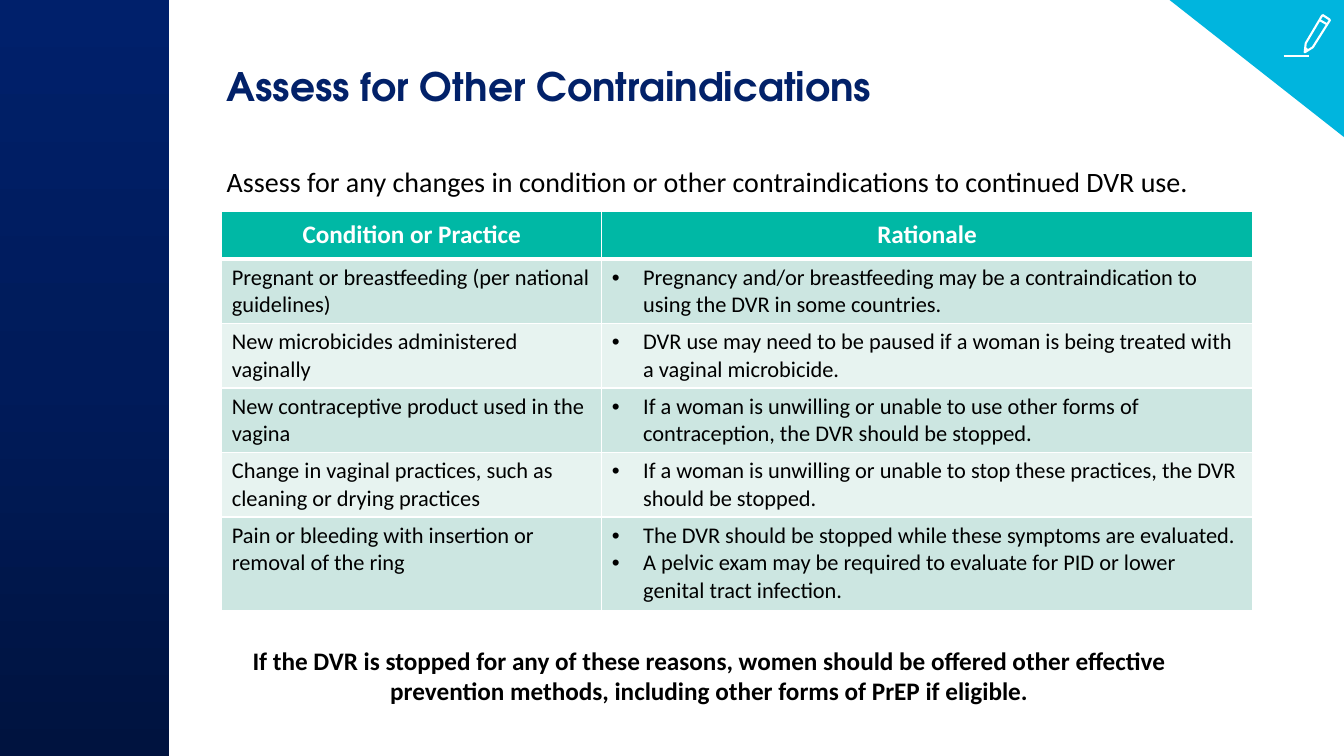
"""Build the slide on assessing other contraindications to continued DVR use."""
from copy import deepcopy
from dataclasses import dataclass

from lxml import etree
from pptx import Presentation
from pptx.dml.color import RGBColor
from pptx.enum import shapes, text
from pptx.oxml import ns
from pptx.util import Inches, Pt

TITLE = "Assess for Other Contraindications"
INTRO = "Assess for any changes in condition or other contraindications to continued DVR use."
ADVICE = ("If the DVR is stopped for any of these reasons, women should be offered other effective "
          "prevention methods, including other forms of PrEP if eligible.")
HEADINGS = ("Condition or Practice", "Rationale")
CONDITIONS = [
    ("Pregnant or breastfeeding (per national guidelines)",
     ["Pregnancy and/or breastfeeding may be a contraindication to using the DVR in some countries."]),
    ("New microbicides administered vaginally",
     ["DVR use may need to be paused if a woman is being treated with a vaginal microbicide."]),
    ("New contraceptive product used in the vagina",
     ["If a woman is unwilling or unable to use other forms of contraception, the DVR should be stopped."]),
    ("Change in vaginal practices, such as cleaning or drying practices",
     ["If a woman is unwilling or unable to stop these practices, the DVR should be stopped."]),
    ("Pain or bleeding with insertion or removal of the ring",
     ["The DVR should be stopped while these symptoms are evaluated.",
      "A pelvic exam may be required to evaluate for PID or lower genital tract infection."]),
]
COLUMN_WIDTHS = (3.77, 6.45)
ROW_HEIGHTS = [0.47] + [0.64] * 4 + [0.93]
PENCIL_OUTLINE = [(13.02, 0.47), (12.94, 0.52), (12.95, 0.43), (13.11, 0.16),
                  (13.12, 0.15), (13.18, 0.19), (13.19, 0.2)]
PENCIL_STROKES = [(13.09, 0.2, 13.16, 0.24), (12.95, 0.48, 12.97, 0.5), (12.73, 0.56, 12.98, 0.56)]


@dataclass(frozen=True)
class Theme:
    title_font: str = "TeX Gyre Adventor"
    body_font: str = "Calibri"
    navy: str = "022169"
    black: str = "000000"
    white: str = "FFFFFF"
    teal: str = "00B8A5"
    cyan: str = "00B5DE"
    bands: tuple = ("CCE6E1", "E7F3F0")
    sidebar: tuple = ("00133F", "001B5A", "00206B")
    title_size: int = 28
    intro_size: int = 20
    strong_size: int = 18
    cell_size: int = 16


THEME = Theme()


def rgb(value):
    return RGBColor.from_string(value)


def style(paragraph, size, color=THEME.black, bold=False, font=THEME.body_font, centred=False):
    paragraph.alignment = text.PP_ALIGN.CENTER if centred else text.PP_ALIGN.LEFT
    for run in paragraph.runs:
        run.font.size, run.font.bold, run.font.name = Pt(size), bold, font
        run.font.color.rgb = rgb(color)


def add_text(slide, box, words, size, **look):
    shape = slide.shapes.add_textbox(*map(Inches, box))
    shape.text_frame.word_wrap = True
    shape.text_frame.text = words
    style(shape.text_frame.paragraphs[0], size, **look)


def add_block(slide, kind, box):
    shape = slide.shapes.add_shape(kind, *map(Inches, box))
    shape.shadow.inherit = False
    shape.line.fill.background()
    return shape


def add_sidebar(slide):
    fill = add_block(slide, shapes.MSO_SHAPE.RECTANGLE, (0, 0, 1.68, 7.5)).fill
    fill.gradient()
    fill.gradient_angle = 90
    stop_list = fill._fill._gradFill.find(ns.qn("a:gsLst"))
    stop_list.insert(1, deepcopy(stop_list[0]))
    for index, (stop, color) in enumerate(zip(fill.gradient_stops, THEME.sidebar)):
        stop.position = index / 2
        stop.color.rgb = rgb(color)


def draw_white(shape):
    shape.line.color.rgb = rgb(THEME.white)
    shape.line.width = Pt(1.5)


def add_pencil(slide):
    points = [(Inches(x), Inches(y)) for x, y in PENCIL_OUTLINE]
    builder = slide.shapes.build_freeform(*points[0])
    builder.add_line_segments(points[1:], close=True)
    outline = builder.convert_to_shape()
    outline.shadow.inherit = False
    outline.fill.background()
    draw_white(outline)
    for stroke in PENCIL_STROKES:
        line = slide.shapes.add_connector(shapes.MSO_CONNECTOR.STRAIGHT, *map(Inches, stroke))
        etree.SubElement(line._element.spPr, ns.qn("a:effectLst"))
        draw_white(line)


def add_borders(cell, top, bottom):
    properties = cell._tc.get_or_add_tcPr()
    sides = (("lnL", 1), ("lnR", 1), ("lnT", top), ("lnB", bottom))
    for index, (side, width) in enumerate(sides):
        border = etree.Element(ns.qn(f"a:{side}"), w=str(Pt(width)))
        solid = etree.SubElement(border, ns.qn("a:solidFill"))
        etree.SubElement(solid, ns.qn("a:srgbClr"), val=THEME.white)
        properties.insert(index, border)


def add_bullet(paragraph):
    properties = paragraph._p.get_or_add_pPr()
    properties.set("marL", str(Inches(0.31)))
    properties.set("indent", str(-Inches(0.31)))
    etree.SubElement(properties, ns.qn("a:buFont"), typeface="Arial")
    etree.SubElement(properties, ns.qn("a:buChar"), char="•")


def fill_cell(cell, lines, row, bulleted):
    header = row == 0
    cell.fill.solid()
    cell.fill.fore_color.rgb = rgb(THEME.teal if header else THEME.bands[(row - 1) % 2])
    add_borders(cell, 3 if row == 1 else 1, 3 if header else 1)
    cell.vertical_anchor = text.MSO_ANCHOR.MIDDLE if header else text.MSO_ANCHOR.TOP
    cell.text_frame.text = "\n".join(lines)
    for paragraph in cell.text_frame.paragraphs:
        if bulleted:
            add_bullet(paragraph)
        if header:
            style(paragraph, THEME.strong_size, THEME.white, bold=True, centred=True)
        else:
            style(paragraph, THEME.cell_size)


def add_conditions(slide):
    rows = [[[heading] for heading in HEADINGS]]
    rows += [[[condition], reasons] for condition, reasons in CONDITIONS]
    box = (2.2, 2.1, sum(COLUMN_WIDTHS), sum(ROW_HEIGHTS))
    table = slide.shapes.add_table(len(rows), len(HEADINGS), *map(Inches, box)).table
    for column, width in zip(table.columns, COLUMN_WIDTHS):
        column.width = Inches(width)
    for row, height in zip(table.rows, ROW_HEIGHTS):
        row.height = Inches(height)
    for row, cells in enumerate(rows):
        for column, lines in enumerate(cells):
            fill_cell(table.cell(row, column), lines, row, row > 0 and column == 1)


def main():
    presentation = Presentation()
    presentation.slide_width, presentation.slide_height = Inches(13.33), Inches(7.5)
    slide = presentation.slides.add_slide(presentation.slide_layouts[6])
    add_sidebar(slide)
    add_text(slide, (2.15, 0.57, 10, 0.92), TITLE, THEME.title_size,
             color=THEME.navy, bold=True, font=THEME.title_font)
    add_conditions(slide)
    corner = add_block(slide, shapes.MSO_SHAPE.RIGHT_TRIANGLE, (11.6, 0, 1.73, 1.36))
    corner.rotation = 180
    corner.fill.solid()
    corner.fill.fore_color.rgb = rgb(THEME.cyan)
    add_pencil(slide)
    add_text(slide, (2.15, 1.58, 10.32, 0.44), INTRO, THEME.intro_size)
    add_text(slide, (2.36, 6.35, 9.35, 0.71), ADVICE, THEME.strong_size, bold=True, centred=True)
    presentation.save("out.pptx")


if __name__ == "__main__":
    main()
